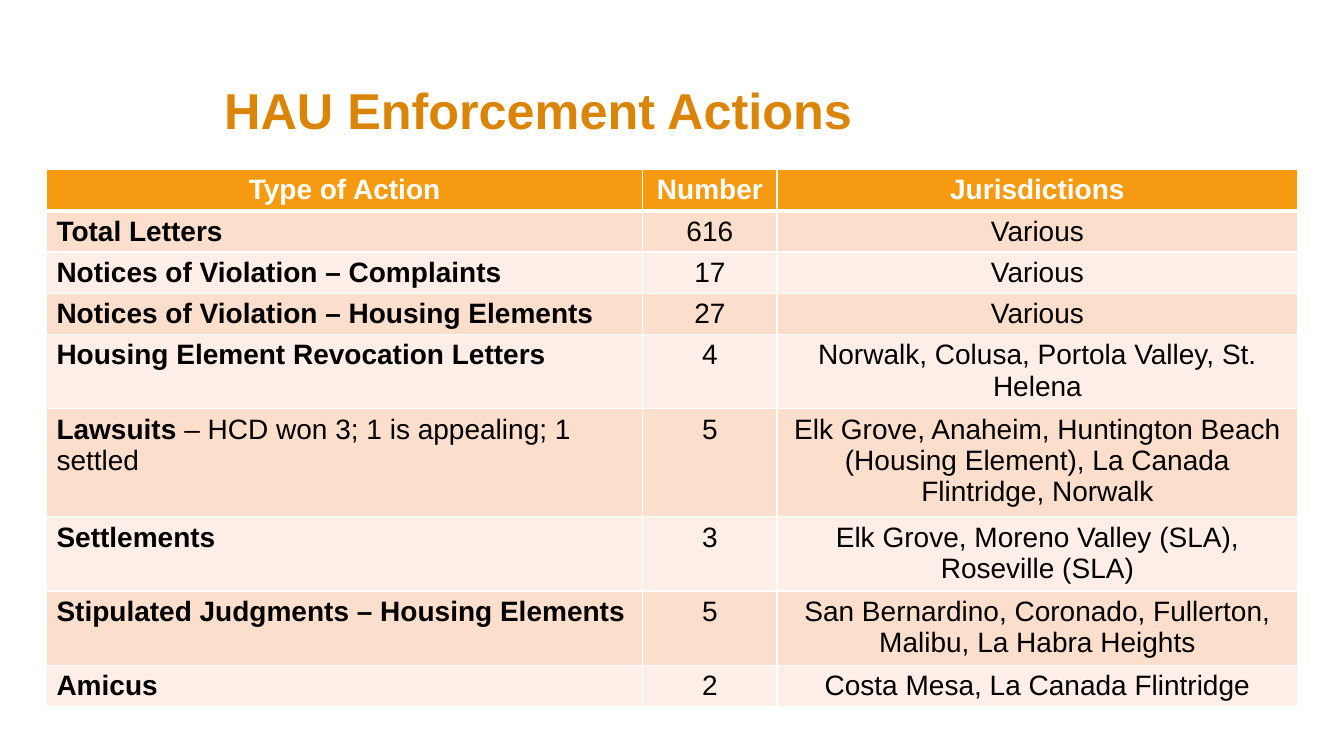
from lxml import etree
from pptx import Presentation
from pptx.dml.color import RGBColor
from pptx.enum.text import MSO_ANCHOR, PP_ALIGN
from pptx.oxml.ns import qn
from pptx.util import Cm, Pt

CENTER, LEFT = PP_ALIGN.CENTER, PP_ALIGN.LEFT
MIDDLE = MSO_ANCHOR.MIDDLE
FONT = "Arial"
COLORS = {
    "title": "DA8508",
    "header": "F69B11",
    "odd": "FBDECC",
    "even": "FDEFE7",
    "text": "000000",
    "white": "FFFFFF",
}
HEADINGS = ("Type of Action", "Number", "Jurisdictions")
COLUMN_WIDTHS = (15.03, 3.38, 13.13)
ROW_HEIGHT = 1.04
EXTRA_LINE = 0.79
ROW_LINES = (1, 1, 1, 1, 2, 3, 2, 2, 1)
ROW_HEIGHTS = [ROW_HEIGHT + EXTRA_LINE * (lines - 1) for lines in ROW_LINES]
ACTIONS = [
    ("Total Letters", "", "616", "Various"),
    ("Notices of Violation – Complaints", "", "17", "Various"),
    ("Notices of Violation – Housing Elements", "", "27", "Various"),
    ("Housing Element Revocation Letters", "", "4",
     "Norwalk, Colusa, Portola Valley, St. Helena"),
    ("Lawsuits", " – HCD won 3; 1 is appealing; 1 settled", "5",
     "Elk Grove, Anaheim, Huntington Beach (Housing Element), "
     "La Canada Flintridge, Norwalk"),
    ("Settlements", "", "3", "Elk Grove, Moreno Valley (SLA), Roseville (SLA)"),
    ("Stipulated Judgments – Housing Elements", "", "5",
     "San Bernardino, Coronado, Fullerton, Malibu, La Habra Heights"),
    ("Amicus", "", "2", "Costa Mesa, La Canada Flintridge"),
]


def rgb(name):
    return RGBColor.from_string(COLORS[name])


def style_run(run, size, color, bold):
    run.font.name = FONT
    run.font.size = Pt(size)
    run.font.bold = bold
    run.font.color.rgb = rgb(color)


def set_borders(cell, top, bottom):
    properties = cell._tc.get_or_add_tcPr()
    widths = {"lnL": 1, "lnR": 1, "lnT": top, "lnB": bottom}
    for position, (side, width) in enumerate(widths.items()):
        line = etree.Element(qn(f"a:{side}"), w=str(Pt(width)))
        fill = etree.SubElement(line, qn("a:solidFill"))
        etree.SubElement(fill, qn("a:srgbClr"), val=COLORS["white"])
        properties.insert(position, line)


def fill_cell(cell, text, background, color, bold, align, top=1, bottom=1):
    cell.fill.solid()
    cell.fill.fore_color.rgb = rgb(background)
    cell.margin_bottom = Cm(0.05)
    set_borders(cell, top, bottom)
    paragraph = cell.text_frame.paragraphs[0]
    paragraph.text = text
    paragraph.alignment = align
    style_run(paragraph.runs[0], 20, color, bold)
    return paragraph


def add_title(slide, left, top, width, height):
    frame = slide.shapes.add_textbox(
        Cm(left), Cm(top), Cm(width), Cm(height)).text_frame
    frame.word_wrap = True
    frame.vertical_anchor = MIDDLE
    frame.margin_left = frame.margin_right = 0
    frame.margin_top = frame.margin_bottom = 0
    frame.text = "HAU Enforcement Actions"
    style_run(frame.paragraphs[0].runs[0], 36, "title", True)


def add_actions_table(slide, left, top):
    table = slide.shapes.add_table(
        len(ROW_HEIGHTS), len(HEADINGS), Cm(left), Cm(top),
        Cm(sum(COLUMN_WIDTHS)), Cm(sum(ROW_HEIGHTS))).table
    for column, width in zip(table.columns, COLUMN_WIDTHS):
        column.width = Cm(width)
    for row, height in zip(table.rows, ROW_HEIGHTS):
        row.height = Cm(height)
    for column, heading in enumerate(HEADINGS):
        fill_cell(table.cell(0, column), heading, "header", "white", True, CENTER,
                  bottom=3)
    for row, (action, outcome, number, jurisdictions) in enumerate(ACTIONS, 1):
        band = "odd" if row % 2 else "even"
        top_line = 3 if row == 1 else 1
        paragraph = fill_cell(
            table.cell(row, 0), action, band, "text", True, LEFT, top_line)
        if outcome:
            outcome_run = paragraph.add_run()
            outcome_run.text = outcome
            style_run(outcome_run, 20, "text", False)
        for column, detail in enumerate((number, jurisdictions), 1):
            fill_cell(table.cell(row, column), detail, band, "text", False,
                      CENTER, top_line)


def main():
    presentation = Presentation()
    presentation.slide_width = Cm(33.87)
    presentation.slide_height = Cm(19.05)
    slide = presentation.slides.add_slide(presentation.slide_layouts[6])
    add_title(slide, 5.65, 1.27, 26.51, 2.97)
    add_actions_table(slide, 1.17, 4.27)
    presentation.save("out.pptx")


if __name__ == "__main__":
    main()
